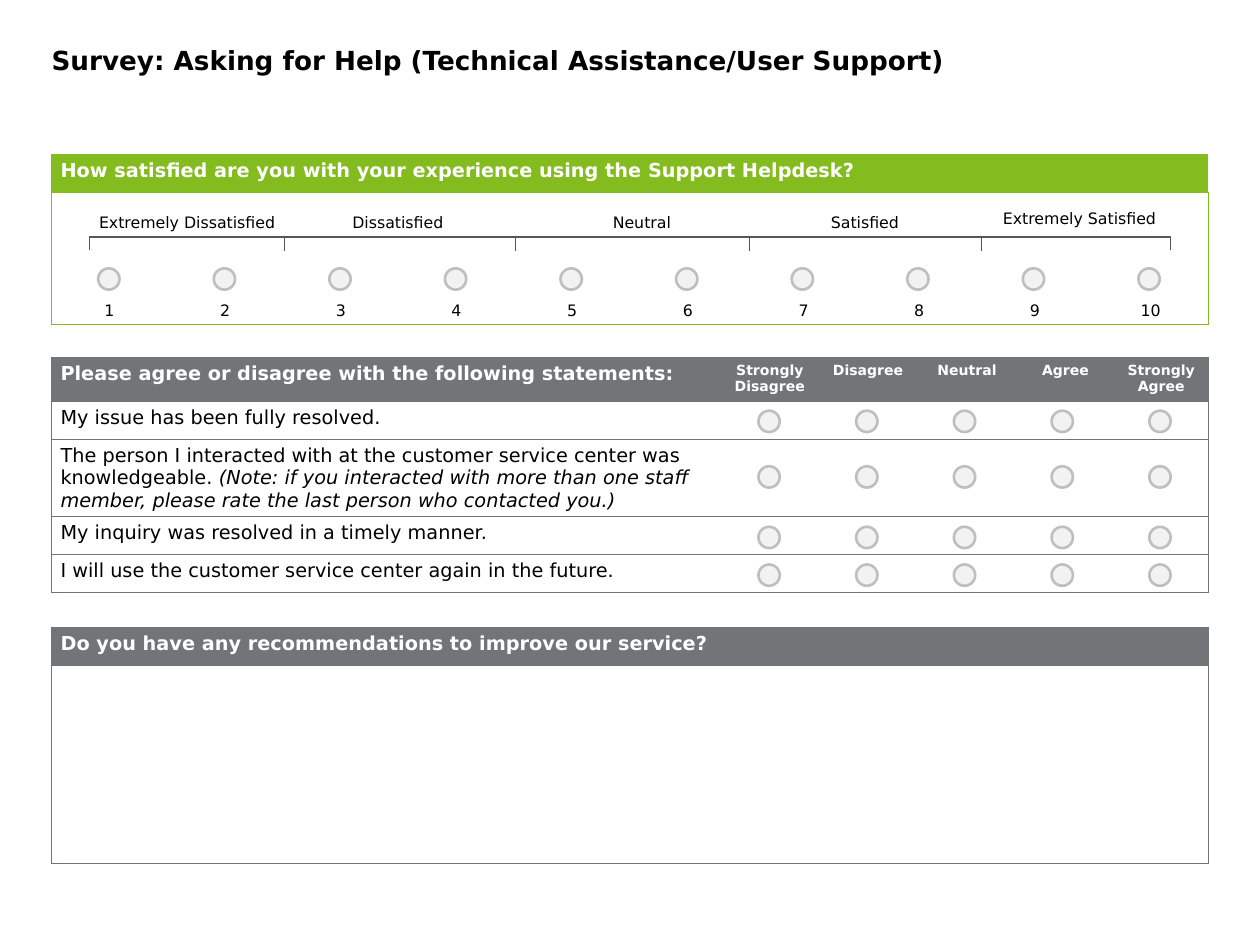
from pptx import Presentation
from pptx import util as u
from pptx.dml.color import RGBColor
from pptx.enum import shapes, text
from pptx.oxml.xmlchemy import OxmlElement

FONT = "DejaVu Sans"
BLACK = RGBColor(0x00, 0x00, 0x00)
WHITE = RGBColor(0xFF, 0xFF, 0xFF)
GREEN = RGBColor(0x84, 0xBC, 0x20)
GRAY = RGBColor(0x72, 0x75, 0x78)
INK = RGBColor(0x53, 0x56, 0x5A)
RING = RGBColor(0xBF, 0xBF, 0xBF)
PALE = RGBColor(0xF2, 0xF2, 0xF2)
LEFT, WIDE, DOT = 1.04, 23.32, 0.43
MID = text.PP_ALIGN.CENTER


def write(frame, words, size=11, bold=False, italic=False, color=BLACK,
          align=text.PP_ALIGN.LEFT, space=None):
    """Add a run to the first paragraph of a text frame."""
    para = frame.paragraphs[0]
    para.alignment = align
    if space:
        para.line_spacing = space
    run = para.add_run()
    run.text = words
    font = run.font
    font.name, font.size = FONT, u.Pt(size)
    font.bold, font.italic = bold, italic
    font.color.rgb = color


def grid(top, cols, rows, color):
    """Add a table with a filled head, ruled rows and an outer frame."""
    frame = slide.shapes.add_table(len(rows), len(cols), u.Cm(LEFT), u.Cm(top),
                                   u.Cm(sum(cols)), u.Cm(sum(rows)))
    table = frame.table
    table.first_row = table.horz_banding = False
    for col, width in zip(table.columns, cols):
        col.width = u.Cm(width)
    for r, height in enumerate(rows):
        table.rows[r].height = u.Cm(height)
        for c in range(len(cols)):
            cell = table.cell(r, c)
            cell.margin_left = cell.margin_right = u.Cm(0.18)
            cell.margin_top = cell.margin_bottom = u.Cm(0.1)
            # Small type keeps empty cells from stretching their row
            cell.text_frame.paragraphs[0]._p.get_or_add_endParaRPr().set("sz", "800")
            props = cell._tc.get_or_add_tcPr()
            sides = {"L": c == 0, "R": c == len(cols) - 1, "T": True, "B": True}
            for side, drawn in sides.items():
                line = OxmlElement(f"a:ln{side}")
                line.set("w", str(u.Pt(0.75)))
                fill = OxmlElement("a:solidFill" if drawn else "a:noFill")
                if drawn:
                    tint = OxmlElement("a:srgbClr")
                    tint.set("val", str(color))
                    fill.append(tint)
                line.append(fill)
                props.append(line)
            if r == 0:
                cell.fill.solid()
                cell.fill.fore_color.rgb = color
            else:
                cell.fill.background()
    return table


deck = Presentation()
deck.slide_width, deck.slide_height = u.Cm(25.4), u.Cm(19.05)
slide = deck.slides.add_slide(deck.slide_layouts[5])

# Title
title = slide.shapes.title
title.left, title.top = u.Cm(LEFT), u.Cm(0.89)
title.width, title.height = u.Cm(WIDE), u.Cm(0.81)
frame = title.text_frame
frame.margin_left = frame.margin_right = frame.margin_top = frame.margin_bottom = 0
frame.vertical_anchor = text.MSO_ANCHOR.TOP
frame.auto_size = text.MSO_AUTO_SIZE.NONE
write(frame, "Survey: Asking for Help (Technical Assistance/User Support)",
      size=15, bold=True)

# Statements to agree or disagree with
views = grid(7.21, [13.49, 1.98, 1.98, 2.01, 1.96, 1.9],
             [0.89, 0.76, 1.55, 0.76, 0.76], GRAY)
write(views.cell(0, 0).text_frame,
      "Please agree or disagree with the following statements:",
      bold=True, color=WHITE)
marks = ["Strongly Disagree", "Disagree", "Neutral", "Agree", "Strongly Agree"]
for c, mark in enumerate(marks, 1):
    write(views.cell(0, c).text_frame, mark, size=8, bold=True, color=WHITE, align=MID)
claims = [
    "My issue has been fully resolved.",
    "The person I interacted with at the customer service center was knowledgeable. ",
    "My inquiry was resolved in a timely manner.",
    "I will use the customer service center again in the future.",
]
for r, claim in enumerate(claims, 1):
    write(views.cell(r, 0).text_frame, claim)
write(views.cell(2, 0).text_frame,
      "(Note: if you interacted with more than one staff member, "
      "please rate the last person who contacted you.)", italic=True)

# Satisfaction scale
scale = grid(3.12, [WIDE / 10] * 10, [0.76, 2.67], GREEN)
scale.cell(0, 0).merge(scale.cell(0, 9))
write(scale.cell(0, 0).text_frame,
      "How satisfied are you with your experience using the Support Helpdesk?",
      bold=True, color=WHITE)
for c in range(10):
    cell = scale.cell(1, c)
    cell.vertical_anchor = text.MSO_ANCHOR.BOTTOM
    write(cell.text_frame, str(c + 1), size=9, align=MID)

# Open question
notes = grid(12.65, [WIDE], [0.76, 4], GRAY)
write(notes.cell(0, 0).text_frame,
      "Do you have any recommendations to improve our service?",
      bold=True, color=WHITE)

# Answer circles: ten on the scale, five for each statement
dots = [(1.98 + 2.33 * i, 5.41) for i in range(10)]
dots += [(15.29 + 1.97 * i, y) for y in (8.28, 9.4, 10.62, 11.38) for i in range(5)]
for x, y in dots:
    dot = slide.shapes.add_shape(shapes.MSO_SHAPE.OVAL, u.Cm(x), u.Cm(y),
                                 u.Cm(DOT), u.Cm(DOT))
    dot.shadow.inherit = False
    dot.fill.solid()
    dot.fill.fore_color.rgb = PALE
    dot.line.color.rgb = RING
    dot.line.width = u.Pt(1.5)

# Bracket over the scale, turned to open downwards
brace = slide.shapes.add_shape(shapes.MSO_SHAPE.RIGHT_BRACKET, u.Cm(12.57),
                               u.Cm(-5.99), u.Cm(0.25), u.Cm(21.79))
brace.adjustments[0] = 0
brace.rotation = 270
brace.shadow.inherit = False
brace.fill.background()
brace.line.color.rgb = INK
brace.line.width = u.Pt(0.75)

# Ticks between the ratings
for x in (5.74, 10.39, 15.11, 19.79):
    tick = slide.shapes.add_connector(shapes.MSO_CONNECTOR.STRAIGHT, u.Cm(x),
                                      u.Cm(4.75), u.Cm(x), u.Cm(5.05))
    tick.line.color.rgb = INK
    tick.line.width = u.Pt(0.75)
    tick._element.spPr.append(OxmlElement("a:effectLst"))

# Rating labels
labels = [
    ("Extremely Dissatisfied", 1.8, 4.22, 3.94),
    ("Dissatisfied", 6.05, 4.22, 3.94),
    ("Neutral", 10.97, 4.22, 3.94),
    ("Satisfied", 15.29, 4.22, 4.29),
    ("Extremely Satisfied", 19.79, 4.14, 3.94),
]
for words, x, y, width in labels:
    label = slide.shapes.add_shape(shapes.MSO_SHAPE.RECTANGLE, u.Cm(x), u.Cm(y),
                                   u.Cm(width), u.Cm(0.51))
    label.shadow.inherit = False
    label.fill.solid()
    label.fill.fore_color.rgb = WHITE
    label.line.fill.background()
    frame = label.text_frame
    frame.word_wrap = True
    frame.vertical_anchor = text.MSO_ANCHOR.MIDDLE
    frame.margin_left = frame.margin_right = 0
    frame.margin_top = frame.margin_bottom = u.Cm(0.25)
    write(frame, words, size=9, align=MID, space=1.06)

deck.save("out.pptx")
